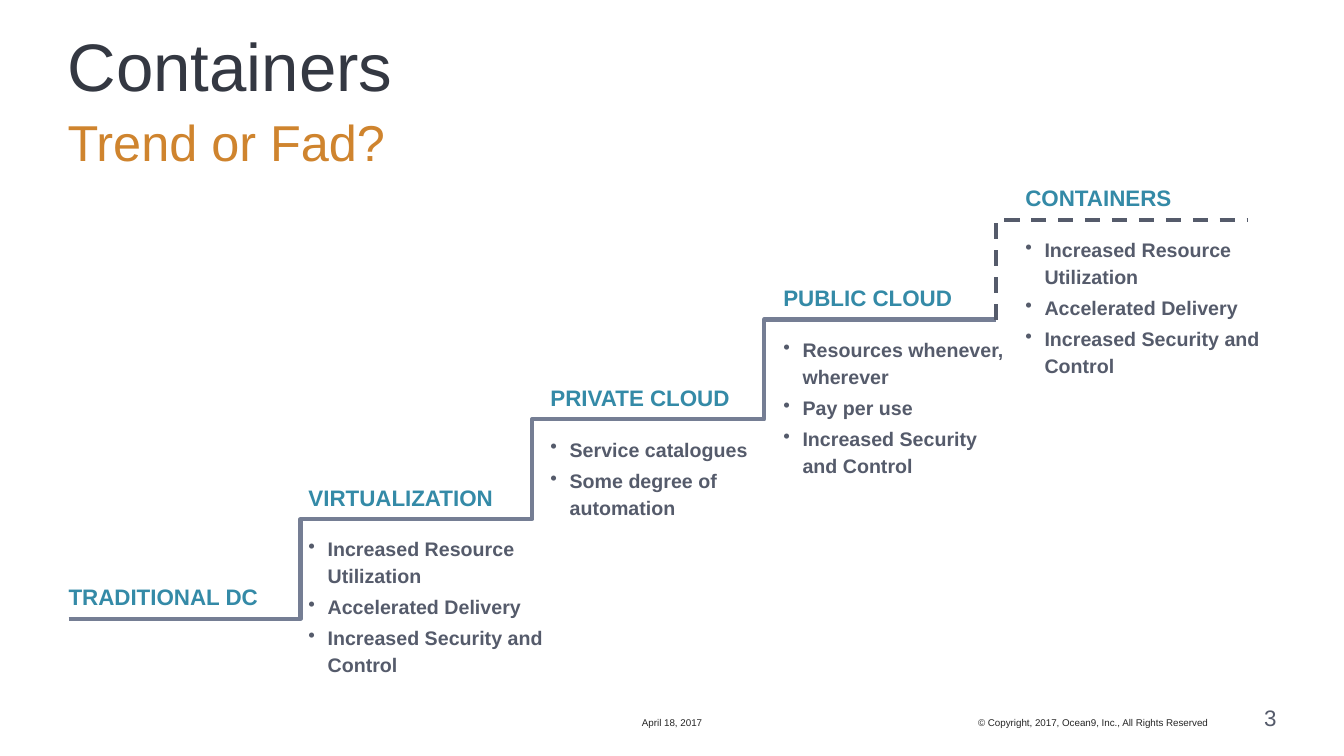
"""Build the Containers slide: a staircase of five infrastructure stages."""
import pptx
import pptx.dml.color
import pptx.enum.dml
import pptx.enum.text
import pptx.oxml
import pptx.oxml.ns
import pptx.util
from dataclasses import dataclass

TITLE = "Containers"
SUBTITLE = "Trend or Fad?"
DATE = "April 18, 2017"
COPYRIGHT = "© Copyright, 2017, Ocean9, Inc., All Rights Reserved"
PAGE = "3"
GAINS = ["Increased Resource Utilization", "Accelerated Delivery", "Increased Security and Control"]
STAGES = [
    {"heading": "TRADITIONAL DC", "benefits": [], "inset": 0, "width": 2.02},
    {"heading": "VIRTUALIZATION", "benefits": GAINS, "inset": 0.08, "width": 2.5},
    {"heading": "PRIVATE CLOUD", "benefits": ["Service catalogues", "Some degree of automation"],
     "inset": 0.18, "width": 2.4},
    {"heading": "PUBLIC CLOUD", "benefits": ["Resources whenever, wherever", "Pay per use", GAINS[2]],
     "inset": 0.19, "width": 2.3},
    {"heading": "CONTAINERS", "benefits": GAINS, "inset": 0.29, "width": 2.5},
]

WIDTH, HEIGHT = 13.33, 7.5
MARGIN = 0.67
FULL = WIDTH - 2 * MARGIN
FOOT = 7
STAIR_LEFT, STAIR_BOTTOM = 0.68, 6.14
TREAD, RISE = 2.3, 0.99
LAST_TREAD = 2.49
HEADING_LIFT = 0.32
HANG = 0.19


@dataclass(frozen=True)
class Theme:
    font: str = "Arial"
    title: str = "343842"
    subtitle: str = "CF842E"
    heading: str = "348AA7"
    body: str = "555B6B"
    footer: str = "262626"
    stair: str = "757E94"
    title_size: int = 48
    subtitle_size: int = 36
    heading_size: int = 16
    body_size: int = 14
    footer_size: int = 7


THEME = Theme()
ALIGN = pptx.enum.text.PP_ALIGN
ANCHOR = pptx.enum.text.MSO_ANCHOR
inch = pptx.util.Inches


def write(frame, text, *, size, color, bold=False, align=ALIGN.LEFT, spacing=0.9, after=0, bullet=False):
    first = frame.paragraphs[0]
    paragraph = frame.add_paragraph() if first.runs else first
    paragraph.alignment = align
    paragraph.line_spacing = spacing
    paragraph.space_after = pptx.util.Pt(after)
    if bullet:
        properties = paragraph._p.get_or_add_pPr()
        properties.set("marL", str(inch(HANG)))
        properties.set("indent", str(-inch(HANG)))
        mark = pptx.oxml.parse_xml(f'<a:buChar {pptx.oxml.ns.nsdecls("a")} char="•"/>')
        properties.append(mark)
    run = paragraph.add_run()
    run.text = text
    run.font.name = THEME.font
    run.font.size = pptx.util.Pt(size)
    run.font.bold = bold
    run.font.color.rgb = pptx.dml.color.RGBColor.from_string(color)


def add_frame(slide, left, top, width, height, anchor=ANCHOR.TOP):
    box = slide.shapes.add_textbox(inch(left), inch(top), inch(width), inch(height))
    frame = box.text_frame
    frame.margin_left = frame.margin_right = frame.margin_top = frame.margin_bottom = 0
    frame.word_wrap = True
    frame.vertical_anchor = anchor
    return frame


def add_stairs(slide, points, color, weight, dash=None):
    corners = [(inch(x), inch(y)) for x, y in points]
    builder = slide.shapes.build_freeform(*corners[0])
    builder.add_line_segments(corners[1:], close=False)
    stairs = builder.convert_to_shape()
    stairs.shadow.inherit = False
    stairs.fill.background()
    stairs.line.color.rgb = pptx.dml.color.RGBColor.from_string(color)
    stairs.line.width = pptx.util.Pt(weight)
    if dash:
        stairs.line.dash_style = dash


def step(index):
    return STAIR_LEFT + index * TREAD, STAIR_BOTTOM - index * RISE


def add_stage(slide, index, stage):
    left, level = step(index)
    frame = add_frame(slide, left + stage["inset"], level - HEADING_LIFT, stage["width"],
                      2 if stage["benefits"] else 0.56)
    write(frame, stage["heading"], size=THEME.heading_size, color=THEME.heading, bold=True,
          after=16.5 if stage["benefits"] else 0)
    for benefit in stage["benefits"]:
        write(frame, benefit, size=THEME.body_size, color=THEME.body, bold=True,
              spacing=1.14, after=3, bullet=True)


def main():
    deck = pptx.Presentation()
    deck.slide_width, deck.slide_height = inch(WIDTH), inch(HEIGHT)
    slide = deck.slides.add_slide(deck.slide_layouts[6])

    write(add_frame(slide, MARGIN, 0.33, FULL, 0.75), TITLE, size=THEME.title_size, color=THEME.title)
    write(add_frame(slide, MARGIN, 1.17, FULL, 0.58), SUBTITLE,
          size=THEME.subtitle_size, color=THEME.subtitle)

    footers = [
        (DATE, 6.12, 1.09, 0.23, ALIGN.CENTER, THEME.footer_size, THEME.footer),
        (COPYRIGHT, 7.58, 4.4, 0.23, ALIGN.RIGHT, THEME.footer_size, THEME.footer),
        (PAGE, 12.08, 0.58, 0.25, ALIGN.RIGHT, THEME.heading_size, THEME.body),
    ]
    for text, left, width, height, align, size, color in footers:
        write(add_frame(slide, left, FOOT, width, height, ANCHOR.BOTTOM), text,
              size=size, color=color, align=align, spacing=1.0)

    last = len(STAGES) - 1
    built = []
    for index in range(last):
        left, level = step(index)
        built += [(left, level), (left + TREAD, level)]
    end, top = step(last)
    add_stairs(slide, built, THEME.stair, 3)
    add_stairs(slide, [built[-1], (end, top), (end + LAST_TREAD, top)], THEME.body, 2.75,
               pptx.enum.dml.MSO_LINE.DASH)

    for index, stage in enumerate(STAGES):
        add_stage(slide, index, stage)
    deck.save("out.pptx")


if __name__ == "__main__":
    main()
